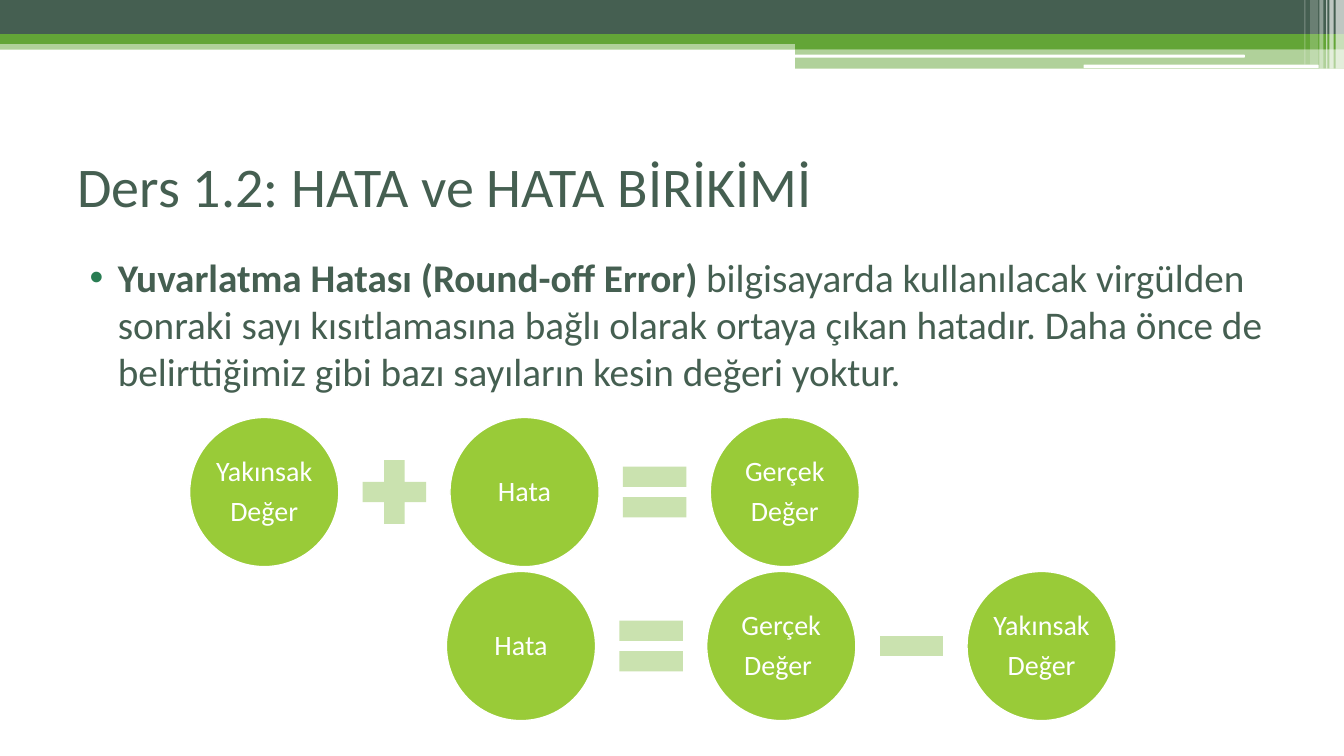
from dataclasses import dataclass

from lxml.etree import SubElement
from pptx import Presentation
from pptx.dml.color import RGBColor
from pptx.enum.shapes import MSO_SHAPE as Shape
from pptx.enum.text import MSO_ANCHOR as Anchor, MSO_AUTO_SIZE as AutoSize, PP_ALIGN as Align
from pptx.oxml.ns import qn
from pptx.util import Cm, Pt


@dataclass(frozen=True)
class Theme:
    font: str = "Calibri"
    dark: str = "455F51"
    green: str = "63A537"
    circle: str = "99CB38"
    sign: str = "CAE2AF"
    bullet: str = "297D53"
    white: str = "FFFFFF"
    title_size: int = 40
    body_size: int = 28
    label_size: int = 20


THEME = Theme()
WIDTH, HEIGHT = 33.87, 19.05
CIRCLE, SIGN, PITCH = 3.76, 2.18, 6.56

# left, top, width, height, colour, opacity in percent
BANDS = [
    (0, 1.02, WIDTH, 0.23, THEME.green, 50),
    (0, 0, WIDTH, 0.86, THEME.dark, 100),
    (0, 0.86, WIDTH, 0.25, THEME.green, 100),
    (20.04, 0.99, 13.83, 0.25, THEME.green, 100),
    (20.04, 1.23, 13.83, 0.5, THEME.green, 50),
]
WHITE_BARS = [(20.02, 1.38, 11.35, 0.07), (27.31, 1.63, 5.92, 0.09)]
# left, width, height, opacity in percent
STRIPES = [
    (33.66, 0.21, 1.73, 65),
    (33.5, 0.11, 1.73, 65),
    (33.42, 0.03, 1.73, 60),
    (33.25, 0.1, 1.73, 40),
    (33.02, 0.2, 1.63, 20),
    (32.87, 0.03, 1.63, 30),
]
# left, top, circle labels, signs between them
EQUATIONS = [
    (4.78, 10.52, ["Yakınsak\nDeğer", "Hata", "Gerçek\nDeğer"],
     [Shape.MATH_PLUS, Shape.MATH_EQUAL]),
    (11.25, 14.4, ["Hata", "Gerçek\nDeğer ", "Yakınsak\nDeğer"],
     [Shape.MATH_EQUAL, Shape.MATH_MINUS]),
]


class SlideBuilder:
    def __init__(self, prs, theme):
        self.theme = theme
        self.s = prs.slides.add_slide(prs.slide_layouts[5])

    def style(self, p, size, color):
        for r in p.runs:
            r.font.name = self.theme.font
            r.font.size = Pt(size)
            r.font.color.rgb = RGBColor.from_string(color)

    def shape(self, kind, left, top, width, height, color, opacity=100):
        sp = self.s.shapes.add_shape(kind, Cm(left), Cm(top), Cm(width), Cm(height))
        sp.shadow.inherit = False
        sp.line.fill.background()
        sp.fill.solid()
        sp.fill.fore_color.rgb = RGBColor.from_string(color)
        if opacity < 100:
            clr = sp.fill._xPr.find(f".//{qn('a:srgbClr')}")
            SubElement(clr, qn("a:alpha"), val=str(opacity * 1000))
        return sp

    def title(self, text, left, top, width, height):
        sp = self.s.shapes.title
        sp.left, sp.top, sp.width, sp.height = Cm(left), Cm(top), Cm(width), Cm(height)
        tf = sp.text_frame
        tf.text = text
        tf.auto_size = AutoSize.NONE
        tf.vertical_anchor = Anchor.MIDDLE
        p = tf.paragraphs[0]
        p.alignment = Align.LEFT
        self.style(p, self.theme.title_size, self.theme.dark)

    def bullet(self, term, text, left, top, width, height):
        """Add a bulleted paragraph that opens with a bold term."""
        tf = self.s.shapes.add_textbox(Cm(left), Cm(top), Cm(width), Cm(height)).text_frame
        tf.word_wrap = True
        p = tf.paragraphs[0]
        p.space_before = Pt(3)
        for part, bold in ((term, True), (text, False)):
            r = p.add_run()
            r.text = part
            r.font.bold = bold
        self.style(p, self.theme.body_size, self.theme.dark)
        pPr = p._p.get_or_add_pPr()
        pPr.set("marL", str(Cm(1.02)))
        pPr.set("indent", str(Cm(-0.71)))
        SubElement(SubElement(pPr, qn("a:buClr")), qn("a:srgbClr"), val=self.theme.bullet)
        SubElement(pPr, qn("a:buFont"), typeface="Arial")
        SubElement(pPr, qn("a:buChar"), char="•")

    def circle(self, text, left, top):
        sp = self.shape(Shape.OVAL, left, top, CIRCLE, CIRCLE, self.theme.circle)
        sp.line.color.rgb = RGBColor.from_string(self.theme.white)
        sp.line.width = Pt(1)
        tf = sp.text_frame
        tf.text = text
        tf.word_wrap = True
        tf.vertical_anchor = Anchor.MIDDLE
        tf.margin_left = tf.margin_right = tf.margin_top = tf.margin_bottom = Cm(0.08)
        for p in tf.paragraphs:
            p.alignment = Align.CENTER
            p.line_spacing = 0.9
            p.space_after = Pt(7)
            self.style(p, self.theme.label_size, self.theme.white)

    def equation(self, left, top, labels, signs):
        for i, label in enumerate(labels):
            self.circle(label, left + i * PITCH, top)
        sign_left = left + (CIRCLE + PITCH - SIGN) / 2
        sign_top = top + (CIRCLE - SIGN) / 2
        for i, sign in enumerate(signs):
            self.shape(sign, sign_left + i * PITCH, sign_top, SIGN, SIGN, self.theme.sign)

    def header(self):
        for band in BANDS:
            self.shape(Shape.RECTANGLE, *band)
        for bar in WHITE_BARS:
            self.shape(Shape.ROUNDED_RECTANGLE, *bar, self.theme.white)
        for left, width, height, opacity in STRIPES:
            self.shape(Shape.RECTANGLE, left, 0, width, height, self.theme.white, opacity)


def main():
    prs = Presentation()
    prs.slide_width, prs.slide_height = Cm(WIDTH), Cm(HEIGHT)
    slide = SlideBuilder(prs, THEME)
    slide.header()
    slide.title("Ders 1.2: HATA ve HATA BİRİKİMİ", 1.7, 3.18, 30.48, 2.97)
    slide.bullet(
        "Yuvarlatma Hatası (Round-off Error) ",
        "bilgisayarda kullanılacak virgülden sonraki sayı kısıtlamasına bağlı olarak "
        "ortaya çıkan hatadır. Daha önce de belirttiğimiz gibi bazı sayıların kesin "
        "değeri yoktur.",
        1.7, 6.25, 30.48, 4.14)
    for equation in EQUATIONS:
        slide.equation(*equation)
    prs.save("out.pptx")


if __name__ == "__main__":
    main()
